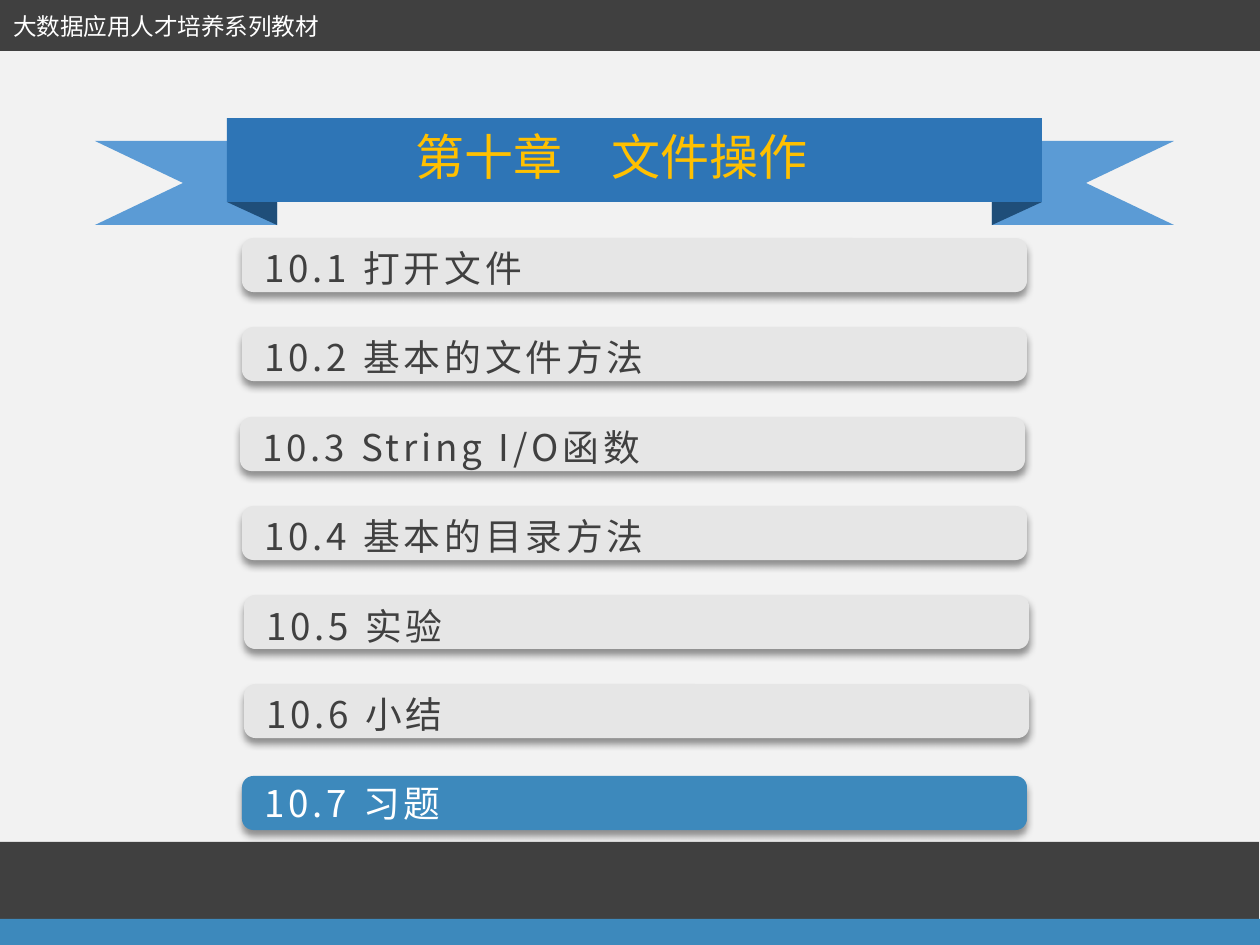
from lxml import etree
from pptx import Presentation
from pptx.dml.color import RGBColor
from pptx.enum.shapes import MSO_SHAPE
from pptx.enum.text import MSO_ANCHOR, MSO_AUTO_SIZE, PP_ALIGN
from pptx.oxml import parse_xml
from pptx.oxml.ns import nsdecls, qn
from pptx.util import Emu, Pt

RECTANGLE = MSO_SHAPE.RECTANGLE
ROUNDED = MSO_SHAPE.ROUNDED_RECTANGLE
TRIANGLE = MSO_SHAPE.RIGHT_TRIANGLE
MIDDLE = MSO_ANCHOR.MIDDLE
FIT_TEXT = MSO_AUTO_SIZE.SHAPE_TO_FIT_TEXT
LEFT, CENTER = PP_ALIGN.LEFT, PP_ALIGN.CENTER

SCALE = 914400 / 126  # EMU in one px
FONT = "Noto Sans CJK SC"

PAPER = RGBColor(0xF2, 0xF2, 0xF2)
WHITE = RGBColor(0xFF, 0xFF, 0xFF)
CHARCOAL = RGBColor(0x40, 0x40, 0x40)
GREY = RGBColor(0xE6, 0xE6, 0xE6)
ACCENT = RGBColor(0x3D, 0x89, 0xBC)
RIBBON = RGBColor(0x2E, 0x75, 0xB6)
RIBBON_TAIL = RGBColor(0x5B, 0x9B, 0xD5)
RIBBON_FOLD = RGBColor(0x1F, 0x4E, 0x79)
GOLD = RGBColor(0xFF, 0xC0, 0x00)

# label, left, top, text width, distance from bar top to text top
SECTIONS = [
    ("10.1 打开文件", 242, 238, 292, 1),
    ("10.2 基本的文件方法", 242, 327, 415, 1),
    ("10.3 String I/O函数", 240, 417, 421, 1),
    ("10.4 基本的目录方法", 242, 506, 415, 1),
    ("10.5 实验", 244, 595, 210, 2),
    ("10.6 小结", 244, 684, 210, 1),
    ("10.7 习题", 242, 776, 210, -2),
]
CURRENT = "10.7 习题"


def px(length):
    return Emu(round(length * SCALE))


def paint(shape, color):
    shape.shadow.inherit = False
    shape.fill.solid()
    shape.fill.fore_color.rgb = color
    shape.line.fill.background()


def add_block(page, kind, box, color):
    shape = page.shapes.add_shape(kind, *map(px, box))
    paint(shape, color)
    return shape


def set_text(shape, text, size, color, align=LEFT, spacing=0):
    """Fill a text holder with one unwrapped, vertically centred line."""
    frame = shape.text_frame
    frame.text = text
    frame.word_wrap = False
    frame.auto_size = FIT_TEXT
    frame.vertical_anchor = MIDDLE
    para = frame.paragraphs[0]
    para.alignment = align
    font = para.font
    font.size = Pt(size)
    font.color.rgb = color
    font.name = FONT
    properties = font._element
    etree.SubElement(properties, qn("a:ea")).set("typeface", FONT)
    if spacing:
        properties.set("spc", str(round(spacing * 100)))


def add_label(page, box, text, size, color, spacing=0):
    label = page.shapes.add_textbox(*map(px, box))
    set_text(label, text, size, color, spacing=spacing)


def add_soft_shadow(shape):
    effects = shape._element.spPr.find(qn("a:effectLst"))
    effects.append(parse_xml(
        f'<a:outerShdw {nsdecls("a")} blurRad="{Pt(4)}" dist="{Pt(3)}" '
        'dir="5400000" algn="t" rotWithShape="0">'
        '<a:srgbClr val="000000"><a:alpha val="40000"/></a:srgbClr>'
        '</a:outerShdw>'))


def add_ribbon(page, left, top, width, title):
    """Draw the ribbon, its two mirrored tails and folds, and its title."""
    inset, band_height, fold_width, drop = 132, 84, 50, 23
    tail_width, notch = inset + fold_width, 88
    tail_top, tail_bottom = top + drop, top + drop + band_height

    for edge, side in ((left, 1), (left + width, -1)):
        inner = edge + side * tail_width
        outline = page.shapes.build_freeform(edge, tail_top, scale=SCALE)
        outline.add_line_segments([
            (inner, tail_top),
            (inner, tail_bottom),
            (edge, tail_bottom),
            (edge + side * notch, (tail_top + tail_bottom) / 2),
        ])
        paint(outline.convert_to_shape(), RIBBON_TAIL)

        fold_left = min(inner, inner - side * fold_width)
        fold_box = (fold_left, top + band_height, fold_width, drop)
        fold = add_block(page, TRIANGLE, fold_box, RIBBON_FOLD)
        fold.rotation = 180
        if side < 0:
            fold._element.spPr.xfrm.set("flipH", "1")

    band_box = (left + inset, top, width - 2 * inset, band_height)
    add_block(page, RECTANGLE, band_box, RIBBON)

    heading = page.shapes.title
    heading.left, heading.top = px(left + 306), px(top + 2)
    heading.width, heading.height = px(421), px(72)
    set_text(heading, title, 28, GOLD, CENTER)
    page.shapes._spTree.append(heading._element)  # in front of the ribbon


def add_section(page, left, top, text, text_width, text_drop):
    current = text == CURRENT
    bar = add_block(page, ROUNDED, (left, top, 785, 54),
                    ACCENT if current else GREY)
    bar.adjustments[0] = 0.21
    add_soft_shadow(bar)
    add_label(page, (left + 10, top + text_drop, text_width, 57), text, 21,
              WHITE if current else CHARCOAL, spacing=2.2)


def add_header(page):
    add_block(page, RECTANGLE, (-1, -1, 1262, 52), CHARCOAL)
    add_label(page, (1, 5, 335, 42), "大数据应用人才培养系列教材", 13.5, WHITE)


def add_footer(page):
    add_block(page, RECTANGLE, (-1, 842, 1260, 77), CHARCOAL)
    add_block(page, RECTANGLE, (0, 919, 1260, 26), ACCENT)


def main():
    deck = Presentation()
    deck.slide_width, deck.slide_height = px(1260), px(945)
    page = deck.slides.add_slide(deck.slide_layouts[5])
    page.background.fill.solid()
    page.background.fill.fore_color.rgb = PAPER

    add_ribbon(page, 95, 118, 1079, "第十章\u3000文件操作".replace("\u3000", "　"))
    for text, left, top, text_width, text_drop in SECTIONS:
        add_section(page, left, top, text, text_width, text_drop)
    add_header(page)
    add_footer(page)
    deck.save("out.pptx")


if __name__ == "__main__":
    main()
